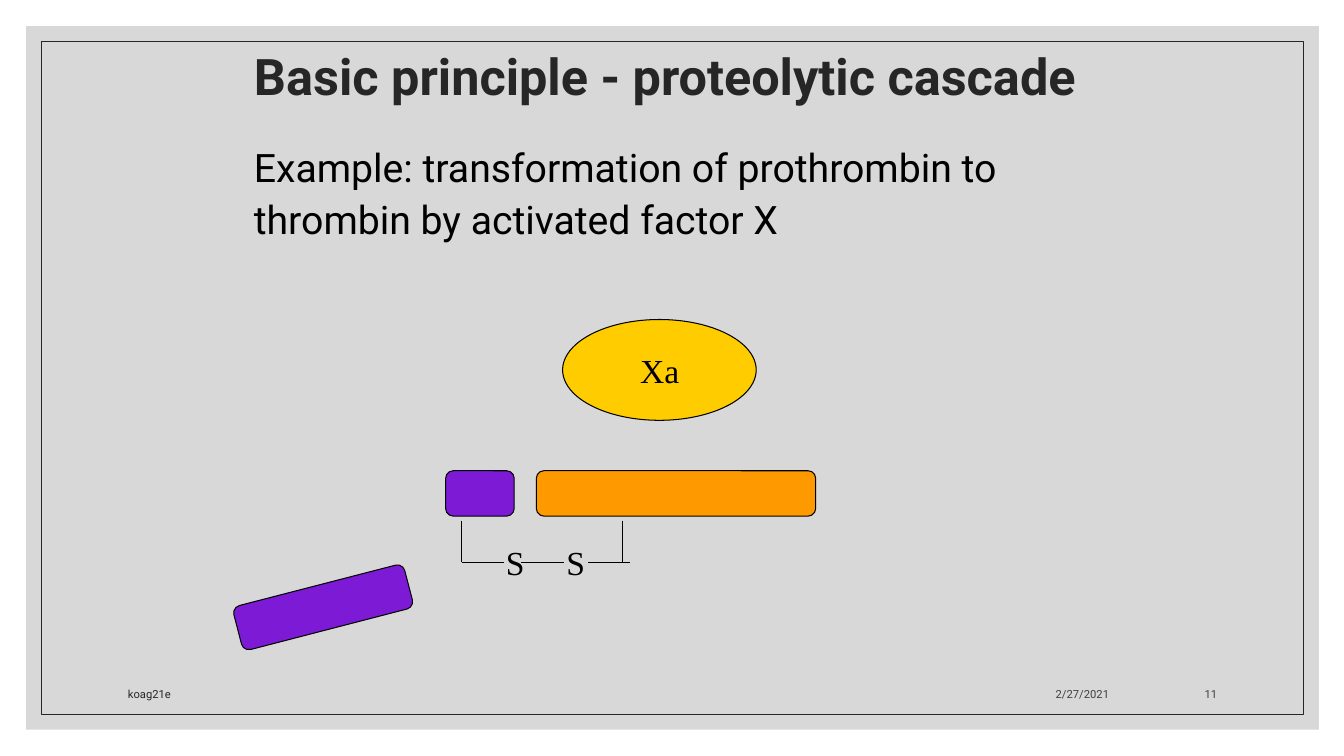
from lxml.etree import SubElement
from pptx import Presentation
from pptx.dml.color import RGBColor
from pptx.enum.shapes import MSO_CONNECTOR, MSO_SHAPE
from pptx.enum.text import MSO_ANCHOR, PP_ALIGN
from pptx.oxml.ns import qn
from pptx.util import Emu, Pt

PX = 9144  # 100 px to the inch
SIZE = (1333, 750)
BLACK, PURPLE = "000000", "7D1AD5"
RECT, ROUND, OVAL = MSO_SHAPE.RECTANGLE, MSO_SHAPE.ROUNDED_RECTANGLE, MSO_SHAPE.OVAL
MID, LOW = MSO_ANCHOR.MIDDLE, MSO_ANCHOR.BOTTOM
RIGHT = PP_ALIGN.RIGHT

# kind, box, fill, line, line width, turn
FRAME = [
    (RECT, (26, 26, 1282, 698), "BFBFBF", None, 0, 0),
    (RECT, (41, 41, 1252, 668), None, "262626", 0.5, 0),
]
PARTS = [
    (ROUND, (442, 467, 68, 45), PURPLE, BLACK, 0.75, 0),
    (ROUND, (532, 467, 277, 45), "FF9900", BLACK, 0.75, 0),
    (ROUND, (233, 580, 175, 45), PURPLE, BLACK, 0.75, 345.5),
    (OVAL, (558, 317, 192, 100), "FFCC00", BLACK, 0.75, 0),
]

BOND_Y, TOP_Y = 558, 517
BONDS = [(x, BOND_Y, x + 42, BOND_Y) for x in (458, 517, 583)]
BONDS += [(x, BOND_Y, x, TOP_Y) for x in (458, 617)]

TITLE = {"size": Pt(36), "name": "Roboto", "bold": True}
BODY = {"size": Pt(28), "name": "Roboto"}
LABEL = {"size": Pt(24), "name": "Times New Roman"}
SMALL = {"size": Pt(8), "name": "Roboto"}

# words, box, font, colour, anchor, paragraph format
TEXTS = [
    ("Basic principle - proteolytic cascade", (242, 33, 875, 92), TITLE, "262626",
     MID, {"line_spacing": 0.9}),
    ("Example: transformation of prothrombin to thrombin by activated factor X",
     (242, 133, 850, 117), BODY, BLACK, None,
     {"line_spacing": 1.1, "space_before": Pt(9)}),
    ("S", (492, 533, 40, 50), LABEL, BLACK, None, {}),
    ("S", (552, 533, 40, 50), LABEL, BLACK, None, {}),
    ("Xa", (625, 342, 75, 50), LABEL, BLACK, None, {}),
    ("2/27/2021", (794, 660, 316, 40), SMALL, "404040", LOW, {"alignment": RIGHT}),
    ("koag21e", (117, 660, 636, 40), SMALL, "262626", LOW, {}),
    ("11", (1125, 660, 92, 40), SMALL, "404040", LOW, {"alignment": RIGHT}),
]


def emu(box):
    return [Emu(n * PX) for n in box]


def rgb(code):
    return RGBColor.from_string(code)


def assign(item, values):
    for key, value in values.items():
        setattr(item, key, value)


def add_part(kind, box, fill, line, width, turn):
    part = slide.shapes.add_shape(kind, *emu(box))
    part.shadow.inherit = False
    part.rotation = turn
    if fill:
        part.fill.solid()
        part.fill.fore_color.rgb = rgb(fill)
    else:
        part.fill.background()
    if line:
        part.line.color.rgb = rgb(line)
        part.line.width = Pt(width)
    else:
        part.line.fill.background()
    return part


def add_bond(ends):
    bond = slide.shapes.add_connector(MSO_CONNECTOR.STRAIGHT, *emu(ends))
    bond.line.color.rgb = rgb(BLACK)
    bond.line.width = Pt(0.75)
    SubElement(bond._element.spPr, qn("a:effectLst"))


def add_text(words, box, font, color, anchor, form):
    frame = slide.shapes.add_textbox(*emu(box)).text_frame
    frame.word_wrap = True
    frame.vertical_anchor = anchor
    para = frame.paragraphs[0]
    assign(para, form)
    run = para.add_run()
    run.text = words
    assign(run.font, font)
    run.font.color.rgb = rgb(color)


deck = Presentation()
deck.slide_width, deck.slide_height = emu(SIZE)
slide = deck.slides.add_slide(deck.slide_layouts[6])

panel, border = [add_part(*row) for row in FRAME]
tint = panel._element.spPr.find(".//" + qn("a:srgbClr"))
SubElement(tint, qn("a:alpha"), val="60000")
for row in PARTS:
    add_part(*row)
for ends in BONDS:
    add_bond(ends)
for row in TEXTS:
    add_text(*row)

deck.save("out.pptx")
